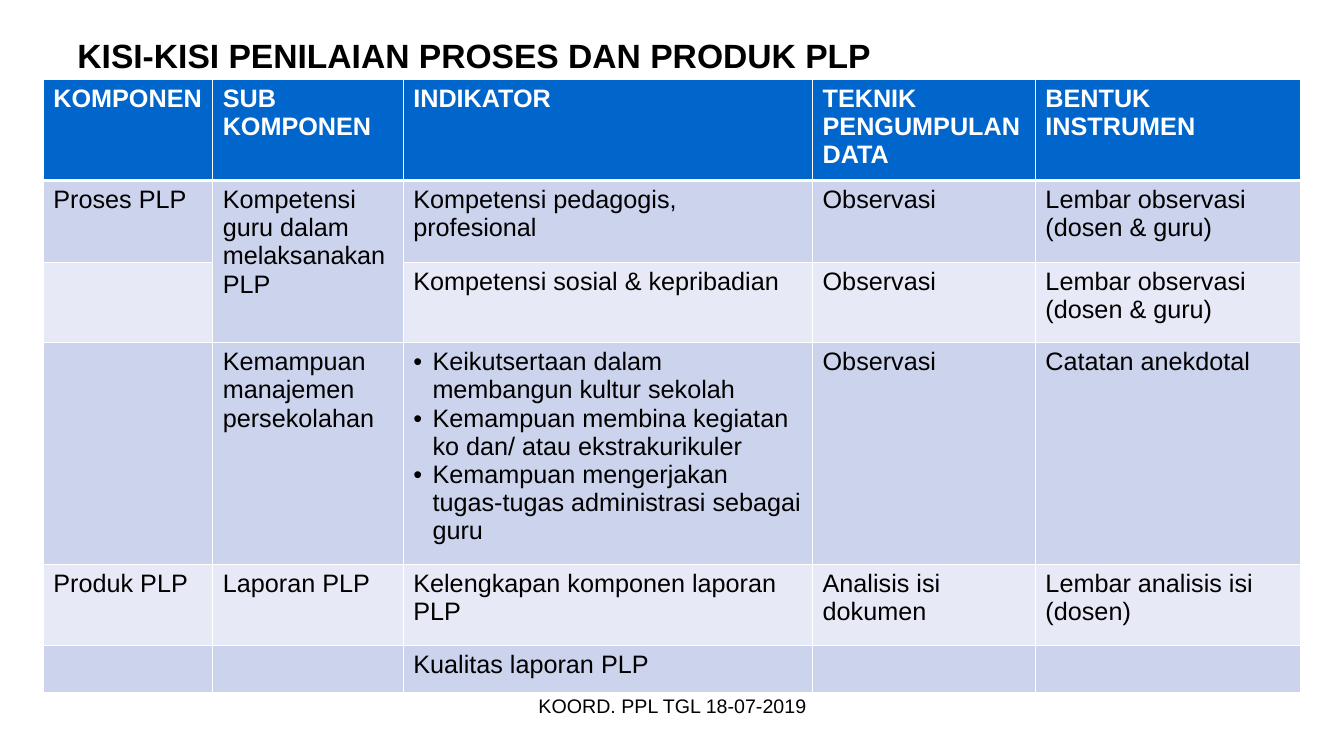
from lxml import etree
from pptx import Presentation
from pptx import util as u
from pptx.dml.color import RGBColor
from pptx.enum import text
from pptx.oxml.ns import qn

PX = 9144
THEME = {
    "font": "Arial",
    "ink": "000000",
    "paper": "FFFFFF",
    "header": "0066CC",
    "bands": ["CCD3EC", "E7EAF6"],
    "title_size": 24,
    "table_size": 18,
    "footer_size": 14,
}
COLUMN_WIDTHS = [168, 189, 406, 221, 263]
ROW_HEIGHTS = [93, 81, 80, 214, 80, 47]
BULLET_INDENT = 19
ROWS = [
    ["KOMPONEN", "SUB KOMPONEN", "INDIKATOR", "TEKNIK PENGUMPULAN DATA", "BENTUK INSTRUMEN"],
    ["Proses PLP", "Kompetensi guru dalam melaksanakan PLP", "Kompetensi pedagogis, profesional",
     "Observasi", "Lembar observasi (dosen & guru)"],
    ["", "", "Kompetensi sosial & kepribadian", "Observasi", "Lembar observasi (dosen & guru)"],
    ["", "Kemampuan manajemen persekolahan",
     ["Keikutsertaan dalam membangun kultur sekolah",
      "Kemampuan membina kegiatan ko dan/ atau ekstrakurikuler",
      "Kemampuan mengerjakan tugas-tugas administrasi sebagai guru"],
     "Observasi", "Catatan anekdotal"],
    ["Produk PLP", "Laporan PLP", "Kelengkapan komponen laporan PLP",
     "Analisis isi dokumen", "Lembar analisis isi (dosen)"],
    ["", "", "Kualitas laporan PLP", "", ""],
]


def write(frame, lines, size, color, bold=False, align=text.PP_ALIGN.LEFT, bulleted=False):
    for index, line in enumerate(lines):
        paragraph = frame.add_paragraph() if index else frame.paragraphs[0]
        paragraph.text = line
        paragraph.alignment = align
        if bulleted:
            properties = paragraph._p.get_or_add_pPr()
            properties.set("marL", str(BULLET_INDENT * PX))
            properties.set("indent", str(-BULLET_INDENT * PX))
            etree.SubElement(properties, qn("a:buFont"), typeface=THEME["font"])
            etree.SubElement(properties, qn("a:buChar"), char="•")
        formats = {"name": THEME["font"], "size": u.Pt(size), "bold": bold}
        for name, value in formats.items():
            setattr(paragraph.font, name, value)
        paragraph.font.color.rgb = RGBColor.from_string(color)


def add_border(cell, side, points):
    properties = cell._tc.get_or_add_tcPr()
    line = etree.SubElement(properties, qn(f"a:ln{side}"), w=str(u.Pt(points)))
    fill = etree.SubElement(line, qn("a:solidFill"))
    etree.SubElement(fill, qn("a:srgbClr"), val=THEME["paper"])


presentation = Presentation()
presentation.slide_width = 1333 * PX
presentation.slide_height = 750 * PX
slide = presentation.slides.add_slide(presentation.slide_layouts[6])

captions = [
    ((67, 30, 1200, 49), "KISI-KISI PENILAIAN PROSES DAN PRODUK PLP", THEME["title_size"],
     True, text.PP_ALIGN.LEFT, text.MSO_ANCHOR.MIDDLE),
    ((456, 683, 422, 52), "KOORD. PPL TGL 18-07-2019", THEME["footer_size"],
     False, text.PP_ALIGN.CENTER, text.MSO_ANCHOR.TOP),
]
for box, words, size, bold, align, anchor in captions:
    frame = slide.shapes.add_textbox(*(length * PX for length in box)).text_frame
    frame.word_wrap = True
    frame.vertical_anchor = anchor
    write(frame, [words], size, THEME["ink"], bold, align)

table = slide.shapes.add_table(
    len(ROWS), len(COLUMN_WIDTHS), 43 * PX, 79 * PX,
    sum(COLUMN_WIDTHS) * PX, sum(ROW_HEIGHTS) * PX).table
for column, width in zip(table.columns, COLUMN_WIDTHS):
    column.width = width * PX
for row, height in zip(table.rows, ROW_HEIGHTS):
    row.height = height * PX
table.cell(1, 1).merge(table.cell(2, 1))

for row_index, entries in enumerate(ROWS):
    is_header = row_index == 0
    fill_color = THEME["header"] if is_header else THEME["bands"][(row_index - 1) % 2]
    text_color = THEME["paper"] if is_header else THEME["ink"]
    borders = {"L": 1, "R": 1, "T": 3 if row_index == 1 else 1, "B": 3 if is_header else 1}
    for column_index, entry in enumerate(entries):
        cell = table.cell(row_index, column_index)
        for side, points in borders.items():
            add_border(cell, side, points)
        cell.fill.solid()
        cell.fill.fore_color.rgb = RGBColor.from_string(fill_color)
        bulleted = isinstance(entry, list)
        write(cell.text_frame, entry if bulleted else [entry], THEME["table_size"],
              text_color, is_header, bulleted=bulleted)

presentation.save("out.pptx")
